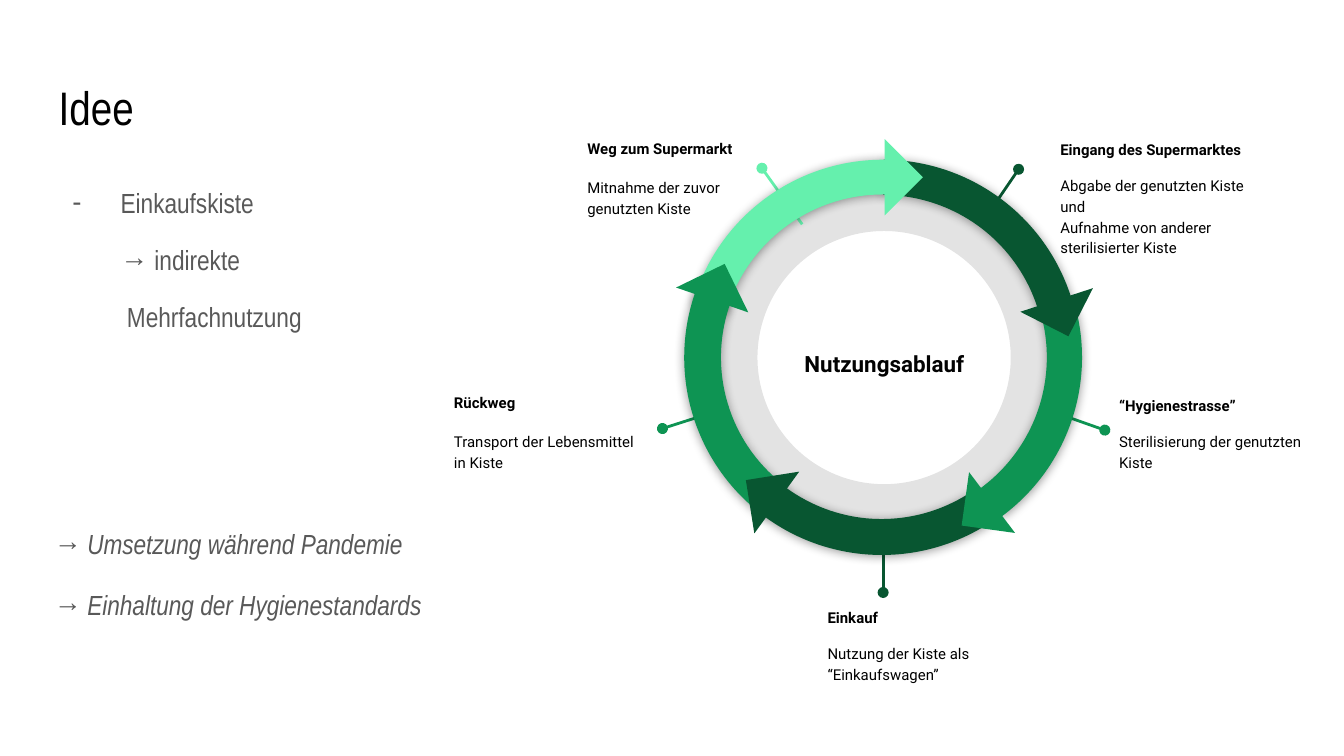
from lxml import etree
from pptx import Presentation
from pptx import util as u
from pptx.dml.color import RGBColor
from pptx.enum import shapes, text
from pptx.oxml import ns, parse_xml

DARK, GREEN, LIGHT = "085631", "0E9453", "65F0AD"
GREY, BLACK = "595959", "000000"


def tint(fill, code):
    fill.solid()
    fill.fore_color.rgb = RGBColor.from_string(code)


def write(frame, content, size=8, font="Roboto", color=BLACK, bold=False, italic=False,
          align=text.PP_ALIGN.LEFT, anchor=text.MSO_ANCHOR.TOP, spacing=1.15, before=0):
    frame.word_wrap = True
    frame.auto_size = text.MSO_AUTO_SIZE.NONE
    frame.vertical_anchor = anchor
    frame.margin_left = frame.margin_right = u.Cm(0.25)
    frame.margin_top = frame.margin_bottom = u.Cm(0.25)
    para = frame.add_paragraph() if frame.text else frame.paragraphs[0]
    para.alignment = align
    para.line_spacing = spacing
    para.space_before, para.space_after = u.Pt(before), u.Pt(0)
    span = para.add_run()
    span.text = content
    span.font.name, span.font.size = font, u.Pt(size)
    span.font.bold, span.font.italic = bold, italic
    tint(span.font.fill, color)
    return para


deck = Presentation()
deck.slide_width, deck.slide_height = u.Cm(25.4), u.Cm(14.29)
page = deck.slides.add_slide(deck.slide_layouts[1])

title, body = page.placeholders
title.left, title.top, title.width, title.height = u.Cm(0.86), u.Cm(1.24), u.Cm(23.67), u.Cm(1.6)
write(title.text_frame, "Idee", size=25.2, font="Arial Narrow", spacing=1)

body.left, body.top, body.width, body.height = u.Cm(0.76), u.Cm(3.23), u.Cm(23.67), u.Cm(9.5)
points = [
    ("Einkaufskiste", 1.27, -0.91, 0, False),
    ("→ indirekte", 1.27, 0, 12, False),
    ("Mehrfachnutzung", 1.39, 0, 12, False),
    ("→ Umsetzung während Pandemie", 0, 0, 103, True),
    ("→ Einhaltung der Hygienestandards", 0, 0, 14, True),
]
for content, margin, indent, before, italic in points:
    para = write(body.text_frame, content, size=14.8, font="Arial Narrow", color=GREY,
                 italic=italic, spacing=1.05, before=before)
    props = para._p.get_or_add_pPr()
    props.set("marL", str(u.Cm(margin)))
    props.set("indent", str(u.Cm(indent)))
    if indent:
        etree.SubElement(props, ns.qn("a:buChar")).set("char", "-")
    else:
        etree.SubElement(props, ns.qn("a:buNone"))

ring = page.shapes.add_shape(shapes.MSO_SHAPE.DONUT, u.Cm(13.18), u.Cm(3.23), u.Cm(7.06), u.Cm(7.06))
ring.adjustments[0] = 0.161
ring.shadow.inherit = False
ring.line.fill.background()
tint(ring.fill, BLACK)
ring_color = ring.element.spPr.find(".//" + ns.qn("a:srgbClr"))
etree.SubElement(ring_color, ns.qn("a:alpha")).set("val", "11000")

callouts = [
    ("Eingang des Supermarktes",
     ["Abgabe der genutzten Kiste und", "Aufnahme von anderer sterilisierter Kiste"],
     DARK, (19.25, 3.2, 18.52, 4.27), (19.79, 2.36), 8.5),
    ("Weg zum Supermarkt", ["Mitnahme der zuvor genutzten Kiste"],
     LIGHT, (14.4, 3.18, 15.16, 4.24), (10.85, 2.34), 10),
    ("“Hygienestrasse”", ["Sterilisierung der genutzten Kiste"],
     GREEN, (20.88, 8.13, 19.66, 7.7), (20.9, 7.19), 8.5),
    ("Rückweg", ["Transport der Lebensmittel in Kiste"],
     GREEN, (12.52, 8.1, 13.77, 7.7), (8.33, 7.14), 10),
    ("Einkauf", ["Nutzung der Kiste als “Einkaufswagen”"],
     DARK, (16.69, 11.2, 16.69, 9.83), (15.39, 11.2), 8.5),
]
for heading, details, color, ends, (left, top), gap in callouts:
    pin = page.shapes.add_connector(shapes.MSO_CONNECTOR.STRAIGHT, *[u.Cm(end) for end in ends])
    tint(pin.line.fill, color)
    pin.line.width = u.Pt(1.5)
    etree.SubElement(pin.line._get_or_add_ln(), ns.qn("a:headEnd")).set("type", "oval")
    etree.SubElement(pin.element.spPr, ns.qn("a:effectLst"))
    box = page.shapes.add_textbox(u.Cm(left), u.Cm(top), u.Cm(4.17), u.Cm(1.85))
    write(box.text_frame, heading, bold=True)
    for number, detail in enumerate(details):
        write(box.text_frame, detail, before=0 if number else gap)

arcs = [
    (12.95, 30, False, (144.144, 189.986, 0.089), DARK),
    (12.98, 210, True, (201.788, 26.239, 0.089), GREEN),
    (12.95, 330, True, (143.341, 188.547, 0.088), LIGHT),
    (12.93, 150, False, (201.845, 30.073, 0.093), GREEN),
    (12.93, 210, True, (157.386, 200.081, 0.091), DARK),
]
for left, angle, flipped, adjustments, color in arcs:
    arc = page.shapes.add_shape(shapes.MSO_SHAPE.BLOCK_ARC, u.Cm(left), u.Cm(3.02), u.Cm(7.47), u.Cm(7.47))
    arc.rotation = angle
    for index, value in enumerate(adjustments):
        arc.adjustments[index] = value
    if flipped:
        arc.element.spPr.find(ns.qn("a:xfrm")).set("flipH", "1")
    tint(arc.fill, color)
    arc.line.fill.background()
    arc.element.spPr.append(parse_xml(
        f'<a:effectLst {ns.nsdecls("a")}><a:outerShdw blurRad="{u.Pt(5.6)}" dist="{u.Pt(0.8)}" '
        f'dir="5400000" rotWithShape="0"><a:srgbClr val="{BLACK}"><a:alpha val="40000"/></a:srgbClr>'
        '</a:outerShdw></a:effectLst>'))

arrow_tips = [
    (19.46, 5.16, 297, DARK),
    (12.95, 5.16, 154, GREEN),
    (18.24, 8.99, 7.9, GREEN),
    (14.17, 8.99, 81, DARK),
    (16.21, 2.84, 225, LIGHT),
]
for left, top, angle, color in arrow_tips:
    tip = page.shapes.add_shape(shapes.MSO_SHAPE.RIGHT_TRIANGLE, u.Cm(left), u.Cm(top), u.Cm(1.02), u.Cm(1.02))
    tip.rotation = angle
    tip.shadow.inherit = False
    tint(tip.fill, color)
    tip.line.fill.background()

center = page.shapes.add_textbox(u.Cm(14.71), u.Cm(5.72), u.Cm(4.01), u.Cm(2.24))
write(center.text_frame, "Nutzungsablauf", size=12, color="020202", bold=True,
      align=text.PP_ALIGN.CENTER, anchor=text.MSO_ANCHOR.MIDDLE)

deck.save("out.pptx")
